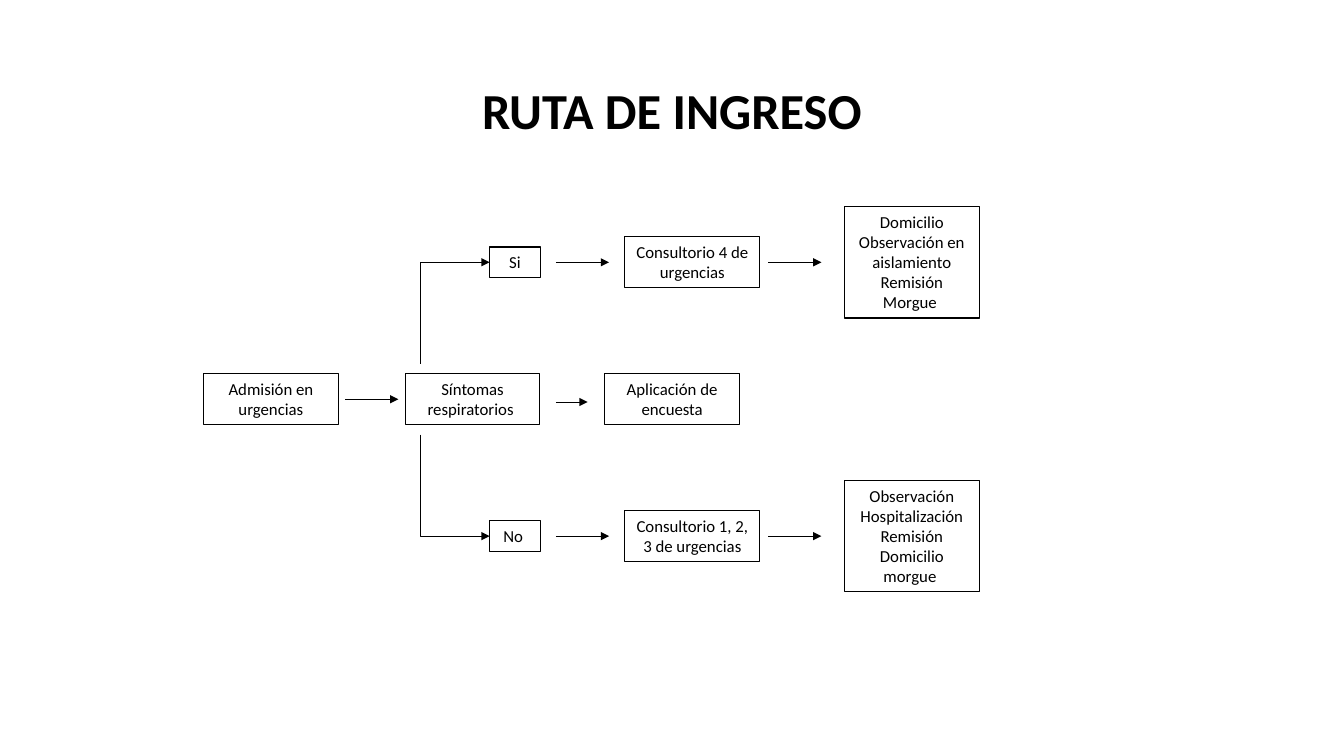
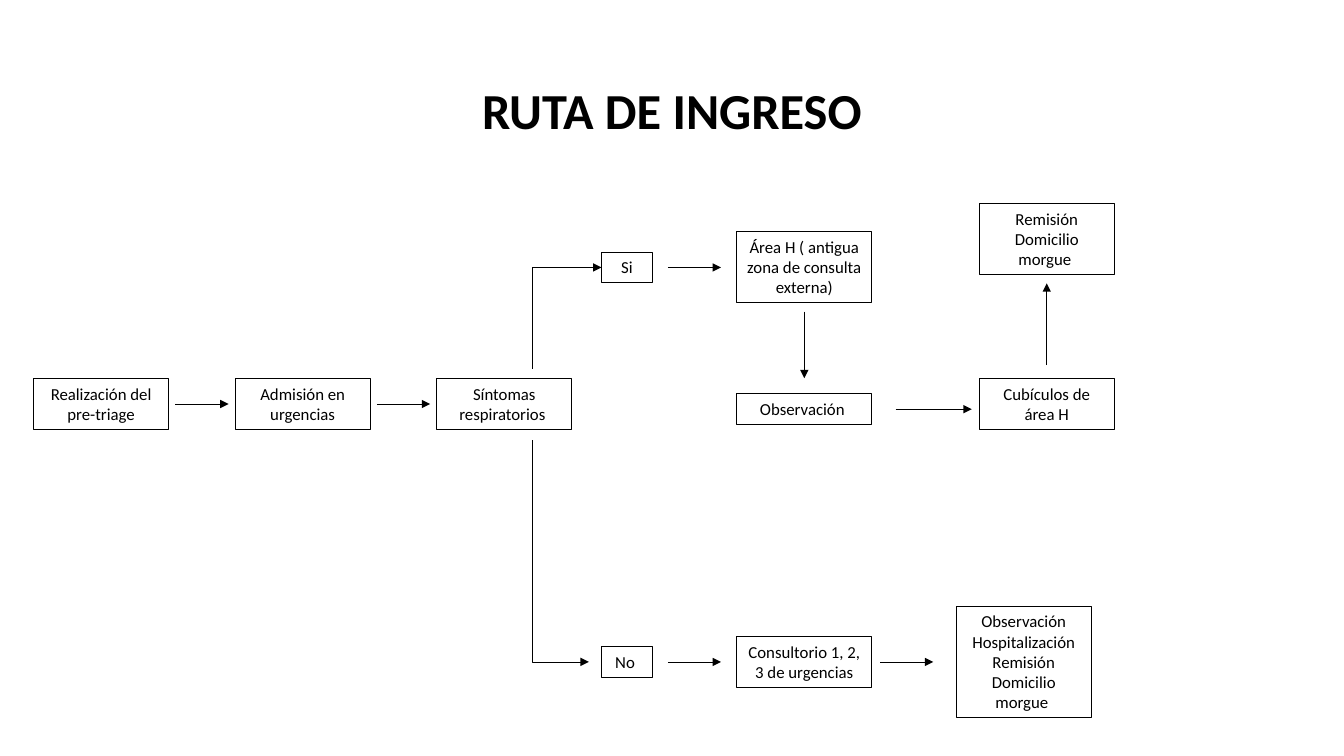
from lxml import etree
from pptx import Presentation
from pptx.dml.color import RGBColor
from pptx.enum.shapes import MSO_CONNECTOR, MSO_SHAPE
from pptx.enum.text import MSO_ANCHOR, MSO_AUTO_SIZE, PP_ALIGN
from pptx.oxml.ns import qn
from pptx.util import Cm, Pt

RECT = MSO_SHAPE.RECTANGLE
LINE = MSO_CONNECTOR.STRAIGHT
ELBOW = MSO_CONNECTOR.ELBOW
MIDDLE = MSO_ANCHOR.MIDDLE
TOP = MSO_ANCHOR.TOP
GROW = MSO_AUTO_SIZE.SHAPE_TO_FIT_TEXT
CENTER = PP_ALIGN.CENTER

FONT = "Calibri"
INK = "000000"
WIDE = 3.4
SLIM = 1.28
STEP = 5.08
DASH = 1.34
REST = ["Observación", "Hospitalización", "Remisión", "Domicilio", "morgue "]


def color(hex_code):
    return RGBColor.from_string(hex_code)


def write(frame, lines, size, bold=False):
    frame.word_wrap = True
    for i, text in enumerate(lines):
        para = frame.paragraphs[0] if i == 0 else frame.add_paragraph()
        para.alignment = CENTER
        run = para.add_run()
        run.text = text
        run.font.name = FONT
        run.font.size = Pt(size)
        run.font.bold = bold
        run.font.color.rgb = color(INK)


def title(slide, text):
    box = slide.shapes.add_textbox(Cm(2.33), Cm(1.01), Cm(29.21), Cm(3.68))
    write(box.text_frame, [text], 36, True)
    box.text_frame.vertical_anchor = MIDDLE
    box.text_frame.paragraphs[0].line_spacing = 0.9


def node(slide, x, mid, lines, rows=2, width=WIDE):
    tall = 0.26 + 0.51 * rows
    box = slide.shapes.add_shape(RECT, Cm(x), Cm(mid - tall / 2), Cm(width), Cm(tall))
    box.shadow.inherit = False
    box.fill.background()
    box.line.color.rgb = color(INK)
    box.line.width = Pt(0.75)
    write(box.text_frame, lines, 12)
    box.text_frame.vertical_anchor = TOP
    box.text_frame.auto_size = GROW


def link(slide, kind, x1, y1, x2, y2):
    line = slide.shapes.add_connector(kind, Cm(x1), Cm(y1), Cm(x2), Cm(y2))
    line.line.color.rgb = color(INK)
    line.line.width = Pt(0.5)
    etree.SubElement(line.line._get_or_add_ln(), qn("a:tailEnd"), type="triangle")
    etree.SubElement(line._element.spPr, qn("a:effectLst"))
    return line


def dash(slide, x, y, length=DASH):
    link(slide, LINE, x, y, x + length, y)


def bend(slide, x1, y1, x2, y2):
    rise = y2 < y1
    mid_x, mid_y = (x1 + x2) / 2, (y1 + y2) / 2
    half, side = abs(y2 - y1) / 2, (x2 - x1) / 2
    if not rise:
        side = -side
    line = link(slide, ELBOW, mid_x + half, mid_y + side, mid_x - half, mid_y - side)
    form = line._element.spPr
    form.find(qn("a:xfrm")).set("rot", "5400000" if rise else "16200000")
    form.find(qn("a:prstGeom")).set("prst", "bentConnector2")


def chain(slide, x, mid, steps):
    for i, text in enumerate(steps):
        left = x + i * STEP
        node(slide, left, mid, [text])
        if i < len(steps) - 1:
            dash(slide, left + 3.57, mid)


def branch(slide, x, start, mid, answer, room, rows=2, ends=None, tip=1.75):
    bend(slide, x, start, x + tip, mid)
    node(slide, x + 1.75, mid, [answer], 1, SLIM)
    dash(slide, x + 3.42, mid)
    node(slide, x + 5.16, mid, [room], rows)
    if ends:
        dash(slide, x + 8.77, mid)
        node(slide, x + 10.69, mid, ends, 5)


def survey(slide, mid):
    chain(slide, 5.13, mid, ["Admisión en urgencias", "Síntomas respiratorios "])
    fork = 10.59
    branch(slide, fork, mid - 0.89, mid - 3.45, "Si", "Consultorio 4 de urgencias",
           ends=["Domicilio", "Observación en aislamiento", "Remisión", "Morgue "])
    branch(slide, fork, mid + 0.89, mid + 3.45, "No ",
           "Consultorio 1, 2, 3 de urgencias", ends=REST)
    dash(slide, fork + 3.42, mid + 0.07, 0.8)
    node(slide, fork + 4.65, mid, ["Aplicación de encuesta"])


def triage(slide, mid):
    chain(slide, 0.85, mid, ["Realización del pre-triage", "Admisión en urgencias",
                             "Síntomas respiratorios "])
    fork = 13.41
    branch(slide, fork, mid - 0.89, mid - 3.44, "Si",
           "Área H ( antigua zona de consulta externa)", 3)
    branch(slide, fork, mid + 0.91, mid + 6.5, "No ",
           "Consultorio 1, 2, 3 de urgencias", ends=REST, tip=1.43)
    room, cell = fork + 5.16, fork + 11.27
    link(slide, LINE, room + WIDE / 2, mid - 2.33, room + WIDE / 2, mid - 0.65)
    node(slide, room, mid + 0.13, ["Observación "], 1)
    dash(slide, room + 4, mid + 0.13, 1.92)
    node(slide, cell, mid, ["Cubículos de área H"])
    link(slide, LINE, cell + WIDE / 2, mid - 0.98, cell + WIDE / 2, mid - 3.04)
    node(slide, cell, mid - 4.15, ["Remisión", "Domicilio", "morgue "], 3)


def main():
    deck = Presentation()
    deck.slide_width, deck.slide_height = Cm(33.87), Cm(19.05)
    for draw, mid in ((survey, 10.06), (triage, 10.18)):
        slide = deck.slides.add_slide(deck.slide_layouts[6])
        title(slide, "RUTA DE INGRESO")
        draw(slide, mid)
    deck.save("out.pptx")


if __name__ == "__main__":
    main()
